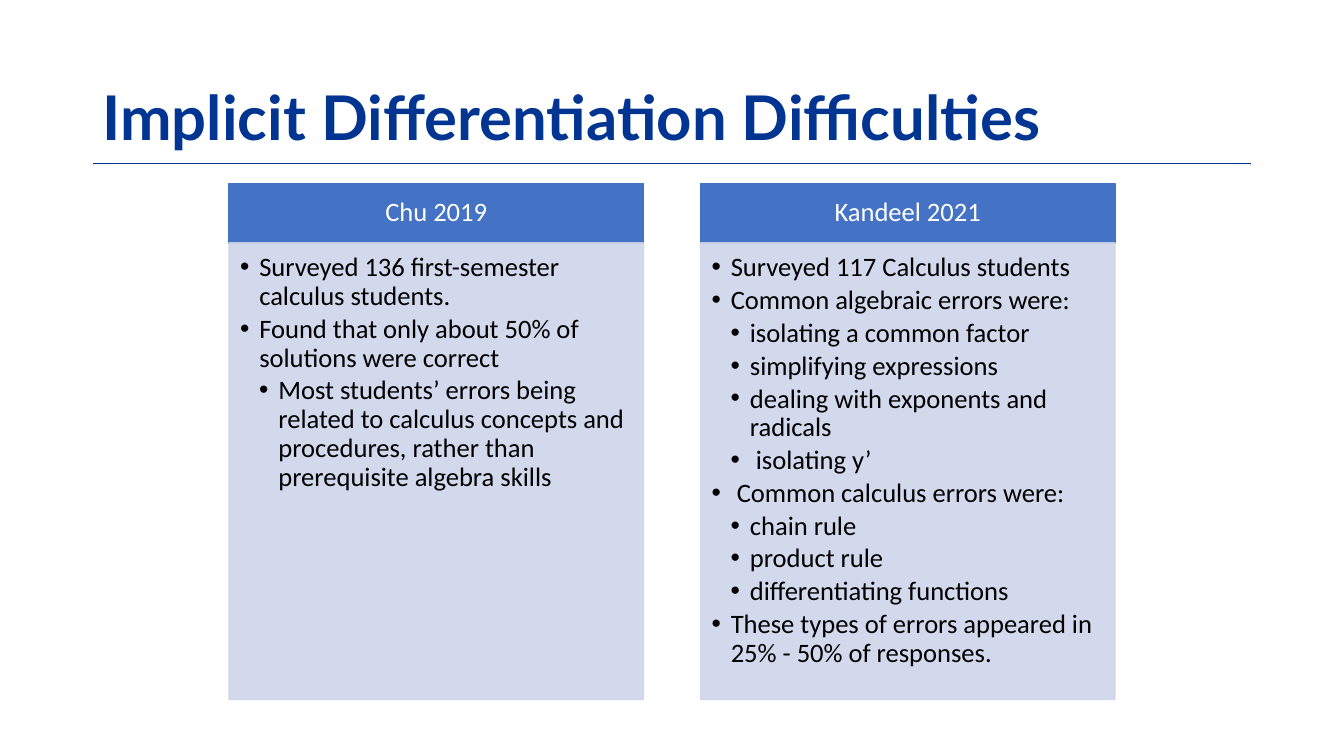
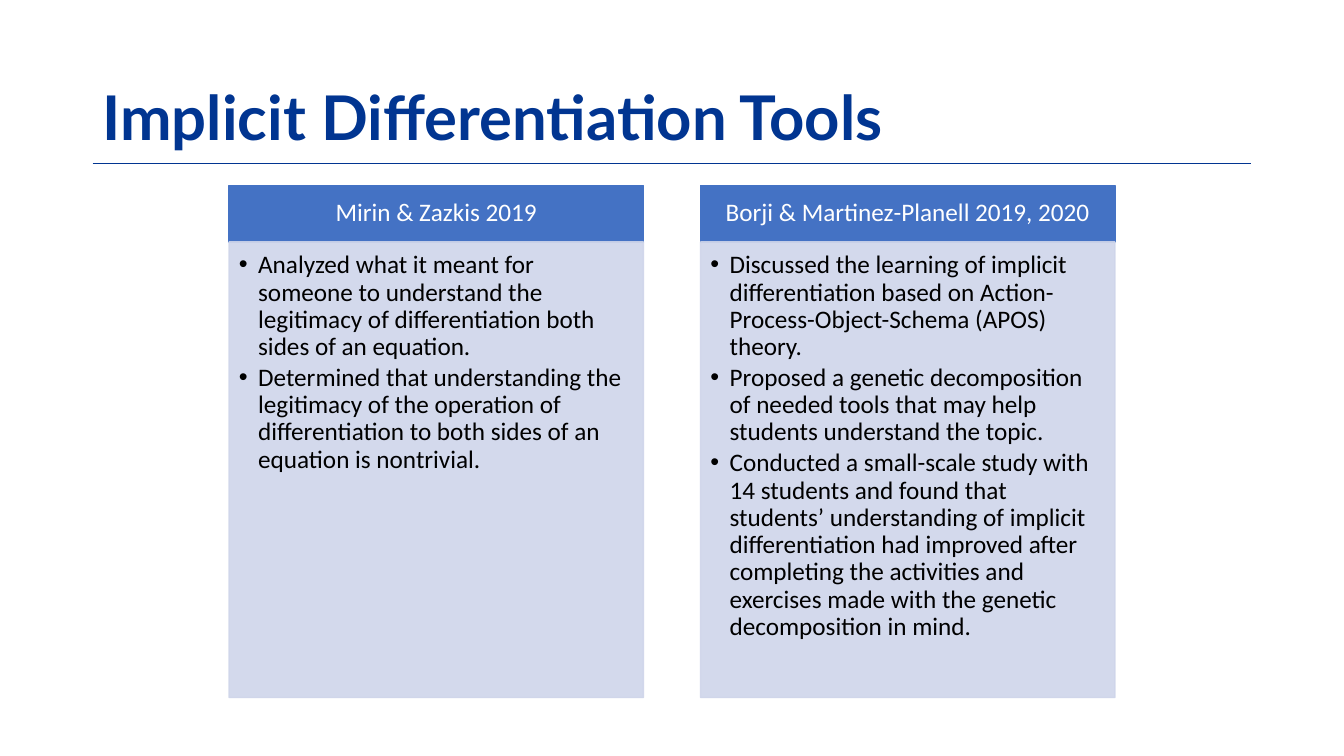
from pptx import Presentation
from pptx.dml.color import RGBColor
from pptx.enum.shapes import MSO_CONNECTOR as CONN, MSO_SHAPE as SHAPE
from pptx.enum.text import MSO_ANCHOR as ANCHOR, PP_ALIGN as ALIGN
from pptx.oxml.ns import qn
from pptx.util import Inches, Pt
from lxml.etree import SubElement

NAVY, BLUE, PALE, WHITE, BLACK = "013591", "4472C4", "CFD5EA", "FFFFFF", "000000"
MARGIN, COL, GAP = 6.9, 30.83, 4.25
LEFT = (100 - 2 * COL - GAP) / 2
RULE = 21.6
INDENT = 0.19

prs = Presentation()
prs.slide_width, prs.slide_height = Inches(13.33), Inches(7.5)


def place(left, top, width, height):
    w, h = prs.slide_width, prs.slide_height
    return [int(v * side / 100) for v, side in ((left, w), (top, h), (width, w), (height, h))]


def write(tf, lines, insets, anchor, align, size, color, font="Calibri", bold=False, after=0):
    tf.word_wrap = True
    tf.vertical_anchor = anchor
    for side, inset in zip(("left", "top", "right", "bottom"), insets):
        setattr(tf, f"margin_{side}", Inches(inset))
    for i, (level, text) in enumerate(lines):
        p = tf.paragraphs[0] if i == 0 else tf.add_paragraph()
        for name, value in {"alignment": align, "line_spacing": 0.9, "space_after": Pt(after)}.items():
            setattr(p, name, value)
        if level:
            pPr = p._p.get_or_add_pPr()
            pPr.set("marL", str(Inches(INDENT * level)))
            pPr.set("indent", str(-Inches(INDENT)))
            SubElement(pPr, qn("a:buFont")).set("typeface", "Arial")
            SubElement(pPr, qn("a:buChar")).set("char", "•")
        r = p.add_run()
        r.text = text
        for name, value in {"name": font, "size": Pt(size), "bold": bold}.items():
            setattr(r.font, name, value)
        r.font.color.rgb = RGBColor.from_string(color)


slides = [
    {"title": "Implicit Differentiation Difficulties", "size": 19,
     "rows": (24.27, 32.13, 92.53),
     "head_insets": (0.15, 0.08, 0.15, 0.08), "body_insets": (0.11, 0.11, 0.15, 0.17),
     "columns": [
         ("Chu 2019", [
             (1, "Surveyed 136 first-semester calculus students."),
             (1, "Found that only about 50% of solutions were correct"),
             (2, "Most students’ errors being related to calculus concepts and procedures, "
                 "rather than prerequisite algebra skills")]),
         ("Kandeel 2021", [
             (1, "Surveyed 117 Calculus students"),
             (1, "Common algebraic errors were:"),
             (2, "isolating a common factor"),
             (2, "simplifying expressions"),
             (2, "dealing with exponents and radicals"),
             (2, " isolating y’"),
             (1, " Common calculus errors were:"),
             (2, "chain rule"),
             (2, "product rule"),
             (2, "differentiating functions"),
             (1, "These types of errors appeared in 25% - 50% of responses.")])]},
    {"title": "Implicit Differentiation Tools", "size": 18,
     "rows": (24.53, 32, 92.27),
     "head_insets": (0.14, 0.08, 0.14, 0.08), "body_insets": (0.1, 0.1, 0.14, 0.16),
     "columns": [
         ("Mirin & Zazkis 2019", [
             (1, "Analyzed what it meant for someone to understand the legitimacy of "
                 "differentiation both sides of an equation."),
             (1, "Determined that understanding the legitimacy of the operation of "
                 "differentiation to both sides of an equation is nontrivial.")]),
         ("Borji & Martinez-Planell 2019, 2020", [
             (1, "Discussed the learning of implicit differentiation based on "
                 "Action-Process-Object-Schema (APOS) theory."),
             (1, "Proposed a genetic decomposition of needed tools that may help "
                 "students understand the topic."),
             (1, "Conducted a small-scale study with 14 students and found that students’ "
                 "understanding of implicit differentiation had improved after completing the "
                 "activities and exercises made with the genetic decomposition in mind.")])]},
]

for data in slides:
    s = prs.slides.add_slide(prs.slide_layouts[6])
    rule = s.shapes.add_connector(CONN.STRAIGHT, *place(MARGIN, RULE, 100 - MARGIN, RULE))
    rule.line.width = Pt(1)
    rule.line.color.rgb = RGBColor.from_string(NAVY)
    SubElement(rule._element.spPr, qn("a:effectLst"))

    title = s.shapes.add_textbox(*place(MARGIN, 8.27, 100 - 2 * MARGIN, 12.8))
    write(title.text_frame, [(0, data["title"])], (0.1, 0.05, 0.1, 0.05),
          ANCHOR.BOTTOM, ALIGN.LEFT, 44, NAVY, "Lato", True)

    size = data["size"]
    top, split, bottom = data["rows"]
    for i, (heading, points) in enumerate(data["columns"]):
        x = LEFT + i * (COL + GAP)
        parts = [
            (top, split, BLUE, 100, [(0, heading)], data["head_insets"],
             ANCHOR.MIDDLE, ALIGN.CENTER, WHITE),
            (split, bottom, PALE, 90, points, data["body_insets"],
             ANCHOR.TOP, ALIGN.LEFT, BLACK),
        ]
        for y, end, color, opacity, lines, insets, anchor, align, ink in parts:
            sp = s.shapes.add_shape(SHAPE.RECTANGLE, *place(x, y, COL, end - y))
            sp.shadow.inherit = False
            sp.fill.solid()
            sp.fill.fore_color.rgb = RGBColor.from_string(color)
            sp.line.color.rgb = RGBColor.from_string(color)
            sp.line.width = Pt(1)
            if opacity < 100:
                for clr in sp._element.spPr.iter(qn("a:srgbClr")):
                    SubElement(clr, qn("a:alpha")).set("val", str(opacity * 1000))
            write(sp.text_frame, lines, insets, anchor, align, size, ink, after=round(0.15 * size, 1))

prs.save("out.pptx")
